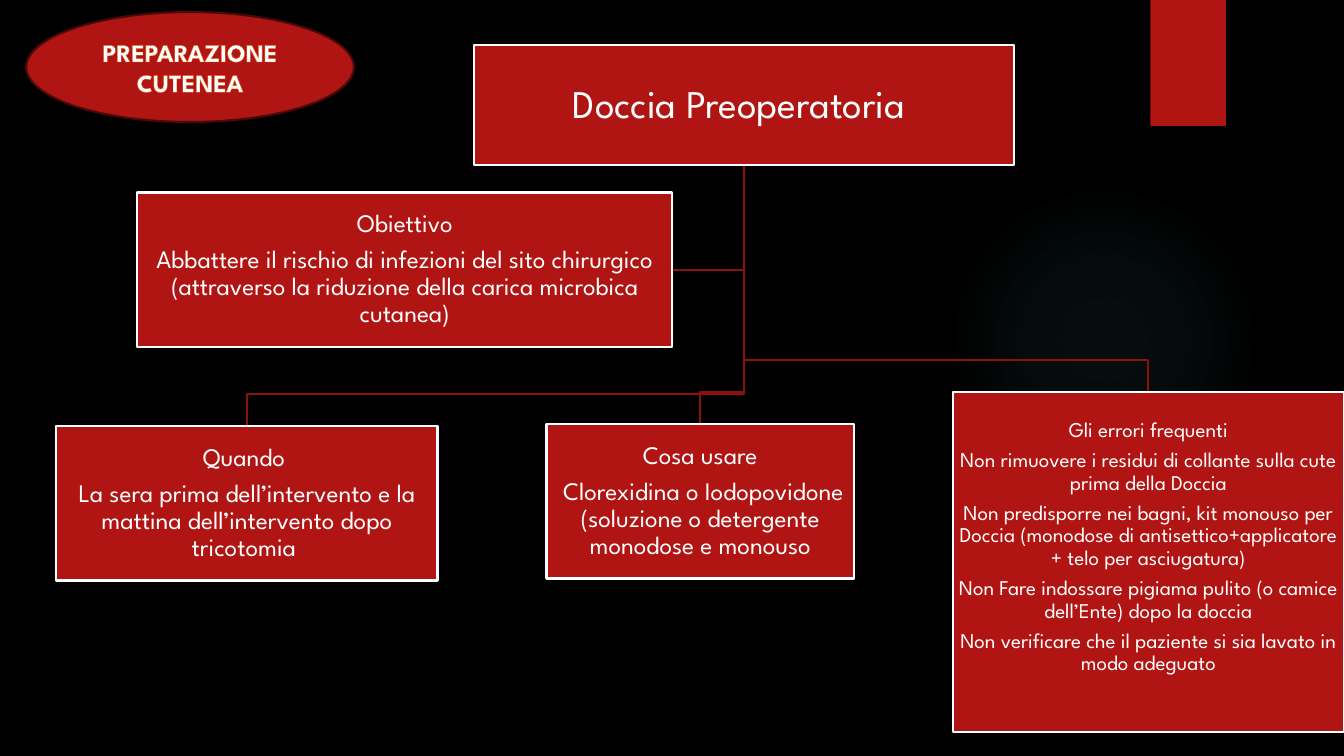
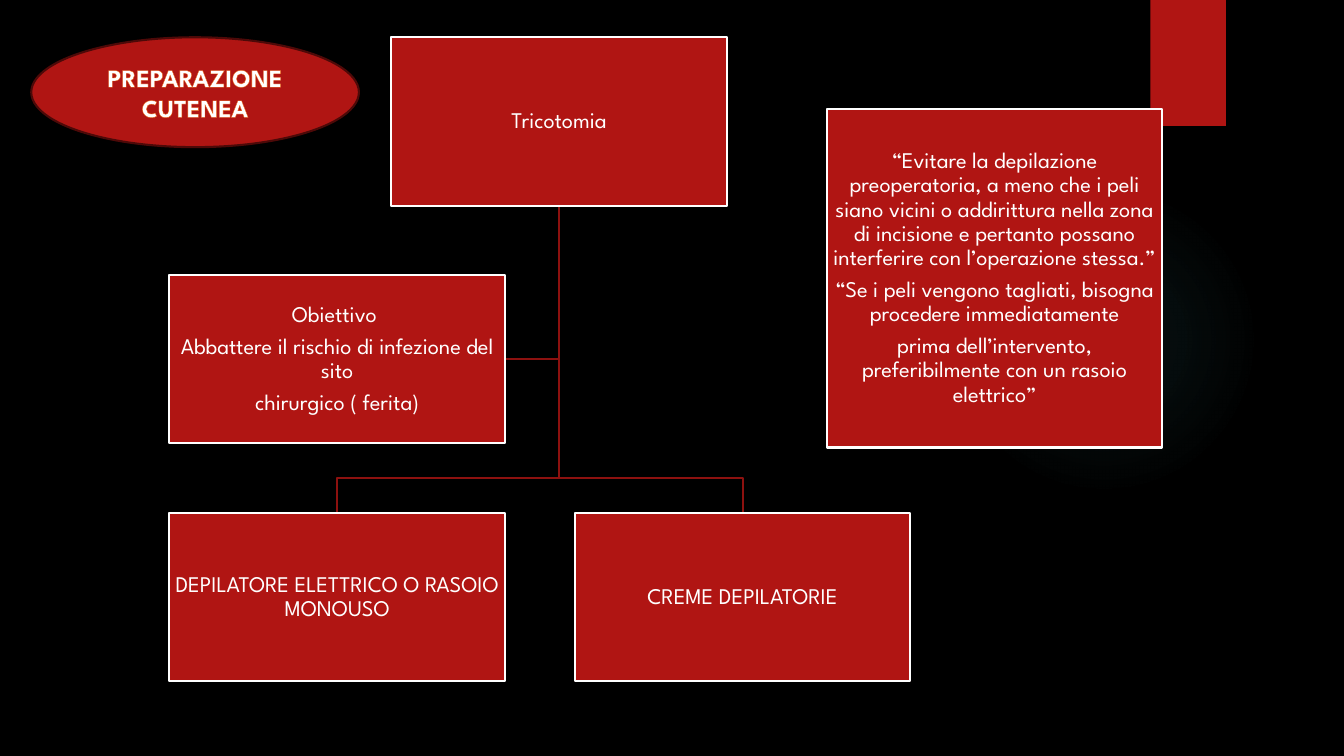
from pptx import Presentation
from pptx.dml.color import RGBColor
from pptx.enum.shapes import MSO_SHAPE
from pptx.enum.text import MSO_ANCHOR, PP_ALIGN
from pptx.oxml import parse_xml
from pptx.oxml.ns import nsdecls
from pptx.util import Inches, Pt

RECTANGLE, OVAL = MSO_SHAPE.RECTANGLE, MSO_SHAPE.OVAL
CENTER, MIDDLE = PP_ALIGN.CENTER, MSO_ANCHOR.MIDDLE
FONT = "League Spartan"
COLORS = {"background": "000000", "red": "B01513", "branch": "8D110F",
          "badge_edge": "4D0908", "white": "FFFFFF",
          "badge_text_edge": "EA6312", "glow": "50B9C1"}
RGB = {role: RGBColor.from_string(code) for role, code in COLORS.items()}
GLOW_STOPS = [(0, 7), (36, 6), (69, 0)]  # position and opacity, in percent

# Boxes: left, top, width, height, text size, bottom inset, paragraphs
CHARTS = [
    {
        "badge": (0.26, 0.12),
        "drop": 0.32,
        "title": (4.7, 0.45, 5.36, 1.19, 28, 0.01, ["Doccia Preoperatoria "]),
        "aim": (1.36, 1.91, 5.31, 1.53, 18, 0.01, [
            "Obiettivo",
            "Abbattere il rischio di infezioni del sito chirurgico "
            "(attraverso la riduzione della carica microbica cutanea)"]),
        "children": [
            (0.56, 4.23, 3.78, 1.53, 18, 0.01, [
                "Quando ",
                "La sera prima dell’intervento e la mattina "
                "dell’intervento dopo tricotomia "]),
            (5.42, 4.21, 3.05, 1.53, 18, 0.01, [
                "Cosa usare",
                " Clorexidina o Iodopovidone (soluzione o detergente "
                "monodose e monouso"]),
            (9.45, 3.89, 3.88, 3.37, 15, 0.3, [
                "Gli errori frequenti",
                "Non rimuovere i residui di collante sulla cute prima "
                "della Doccia",
                "Non predisporre nei bagni, kit monouso per Doccia "
                "(monodose di antisettico+applicatore + telo per asciugatura)",
                "Non Fare indossare pigiama pulito (o camice dell’Ente) "
                "dopo la doccia",
                "Non verificare che il paziente si sia lavato in modo "
                "adeguato"]),
        ],
        "quotes": [],
    },
    {
        "badge": (0.31, 0.37),
        "drop": 0.35,
        "title": (3.88, 0.37, 3.33, 1.67, 16, 0.01, ["Tricotomia"]),
        "aim": (1.68, 2.73, 3.33, 1.67, 16, 0.01, [
            "Obiettivo ",
            "Abbattere il rischio di infezione del sito",
            "chirurgico ( ferita)"]),
        "children": [
            (1.68, 5.09, 3.33, 1.67, 16, 0.01,
             ["DEPILATORE ELETTRICO O RASOIO MONOUSO"]),
            (5.7, 5.09, 3.33, 1.67, 16, 0.01, ["CREME DEPILATORIE"]),
        ],
        "quotes": [
            (8.2, 1.08, 3.33, 3.36, 16, 0.01, [
                "“Evitare la depilazione preoperatoria, a meno che i peli "
                "siano vicini o addirittura nella zona di incisione e "
                "pertanto possano interferire con l’operazione stessa.”",
                "“Se i peli vengono tagliati, bisogna procedere "
                "immediatamente",
                "prima dell’intervento, preferibilmente con un rasoio "
                "elettrico”"]),
        ],
    },
]


def add_box(slide, left, top, width, height, size, bottom_inset, paragraphs,
            preset=RECTANGLE, edge="white"):
    box = slide.shapes.add_shape(preset, Inches(left), Inches(top),
                                 Inches(width), Inches(height))
    box.shadow.inherit = False
    box.fill.solid()
    box.fill.fore_color.rgb = RGB["red"]
    box.line.color.rgb = RGB[edge]
    box.line.width = Pt(1.5)
    frame = box.text_frame
    frame.word_wrap = True
    frame.vertical_anchor = MIDDLE
    frame.margin_left = frame.margin_right = frame.margin_top = Inches(0.01)
    frame.margin_bottom = Inches(bottom_inset)
    for index, text in enumerate(paragraphs):
        paragraph = frame.add_paragraph() if index else frame.paragraphs[0]
        paragraph.text = text
        paragraph.alignment = CENTER
        paragraph.line_spacing = 0.9
        paragraph.space_after = Pt(round(size * 0.35, 1))
        paragraph.font.name = FONT
        paragraph.font.size = Pt(size)
        paragraph.font.color.rgb = RGB["white"]
    return box


def add_branch(slide, start, *corners):
    """Draw an open, angled line from start through the corners, in inches."""
    outline = slide.shapes.build_freeform(
        Inches(start[0]), Inches(start[1]), scale=1.0)
    outline.add_line_segments([(Inches(x), Inches(y)) for x, y in corners],
                              close=False)
    branch = outline.convert_to_shape()
    branch.shadow.inherit = False
    branch.fill.background()
    branch.line.color.rgb = RGB["branch"]
    branch.line.width = Pt(1.5)


prs = Presentation()
prs.slide_width, prs.slide_height = Inches(13.33), Inches(7.5)
backdrop = prs.slide_master.background.fill
backdrop.solid()
backdrop.fore_color.rgb = RGB["background"]

for chart in CHARTS:
    slide = prs.slides.add_slide(prs.slide_layouts[6])

    glow = slide.shapes.add_shape(OVAL, Inches(9.41), Inches(1.83),
                                  Inches(3.08), Inches(3.08))
    stops = "".join(
        f'<a:gs pos="{position * 1000}"><a:srgbClr val="{COLORS["glow"]}">'
        f'<a:alpha val="{opacity * 1000}"/></a:srgbClr></a:gs>'
        for position, opacity in GLOW_STOPS)
    glow._element.spPr.append(parse_xml(
        f'<a:gradFill {nsdecls("a")}><a:gsLst>{stops}</a:gsLst>'
        '<a:path path="circle"><a:fillToRect l="50000" t="50000" r="50000" '
        'b="50000"/></a:path></a:gradFill>'))
    glow.line.fill.background()
    glow.shadow.inherit = False

    corner_tab = slide.shapes.add_shape(RECTANGLE, Inches(11.41), 0,
                                        Inches(0.75), Inches(1.25))
    corner_tab.fill.solid()
    corner_tab.fill.fore_color.rgb = RGB["red"]
    corner_tab.line.fill.background()
    corner_tab.shadow.inherit = False

    left, top, width, height = chart["title"][:4]
    trunk_x, trunk_top = left + width / 2, top + height
    left, top, width, height = chart["aim"][:4]
    aim_y = top + height / 2
    add_branch(slide, (trunk_x, trunk_top), (trunk_x, aim_y),
               (left + width, aim_y))
    for left, top, width, *_ in reversed(chart["children"]):
        child_x, bus_y = left + width / 2, top - chart["drop"]
        add_branch(slide, (trunk_x, trunk_top), (trunk_x, bus_y),
                   (child_x, bus_y), (child_x, top))

    for box in [chart["title"], *chart["children"], chart["aim"],
                *chart["quotes"]]:
        add_box(slide, *box)

    badge = add_box(slide, *chart["badge"], 3.25, 1.09, 18, 0.05,
                    ["PREPARAZIONE CUTENEA"], OVAL, "badge_edge")
    badge.text_frame.margin_left = badge.text_frame.margin_right = Inches(0.1)
    badge.text_frame.margin_top = Inches(0.05)
    label = badge.text_frame.paragraphs[0]
    label.line_spacing = 1.0
    label.space_after = Pt(0)
    label.font.bold = True
    label.runs[0]._r.get_or_add_rPr().insert(0, parse_xml(
        f'<a:ln {nsdecls("a")} w="{Pt(0.52)}"><a:solidFill>'
        f'<a:srgbClr val="{COLORS["badge_text_edge"]}"/>'
        '</a:solidFill></a:ln>'))

prs.save("out.pptx")
